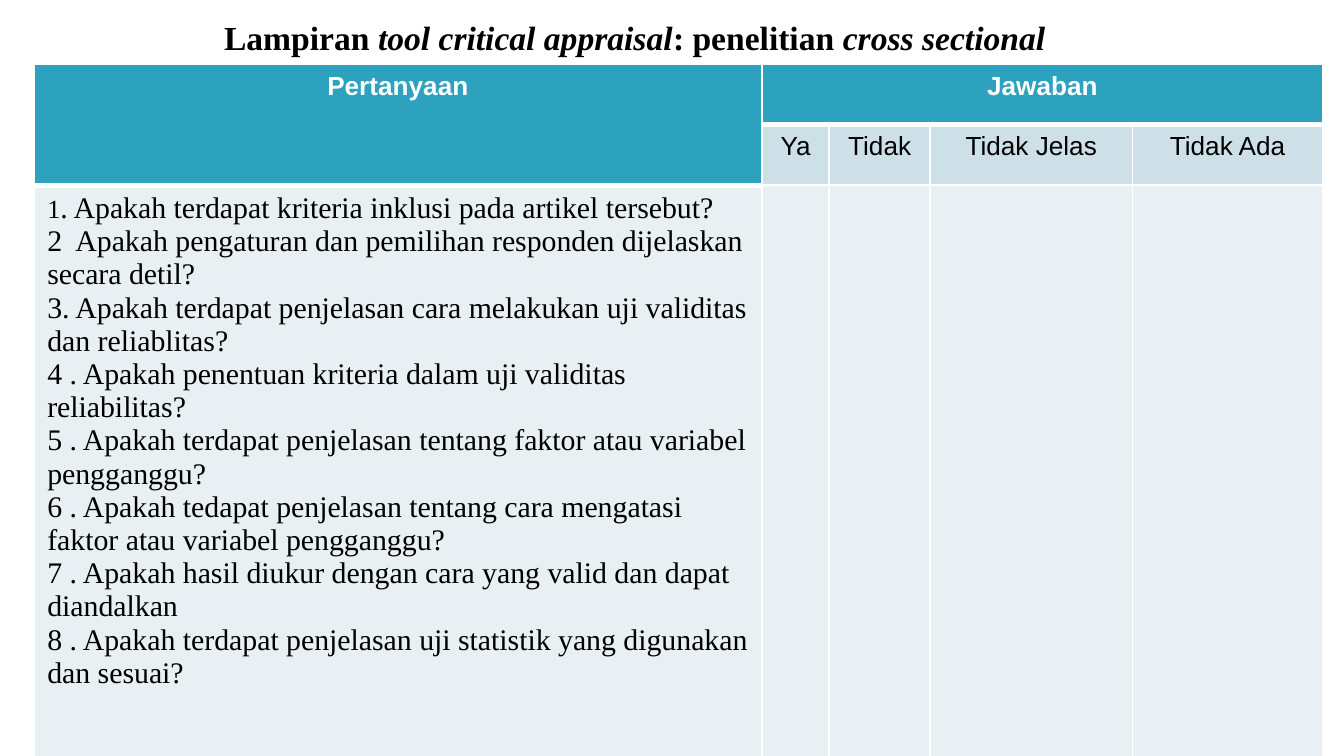
from lxml import etree
from pptx import Presentation
from pptx.dml.color import RGBColor
from pptx.enum.text import MSO_ANCHOR, MSO_AUTO_SIZE, PP_ALIGN
from pptx.oxml.ns import qn
from pptx.util import Cm, Pt

CENTER, LEFT = PP_ALIGN.CENTER, PP_ALIGN.LEFT
MIDDLE, NO_FIT = MSO_ANCHOR.MIDDLE, MSO_AUTO_SIZE.NONE
BLACK = RGBColor(0x00, 0x00, 0x00)
WHITE = RGBColor(0xFF, 0xFF, 0xFF)
TEAL = RGBColor(0x2D, 0xA2, 0xBF)
BLUE = RGBColor(0xCD, 0xE0, 0xE8)
PALE = RGBColor(0xE8, 0xF0, 0xF4)
SANS, SERIF = "Arial", "Times New Roman"

TITLE = [  # text, italic
    ("Lampiran ", False),
    ("tool critical appraisal", True),
    (": penelitian ", False),
    ("cross sectional ", True),
]
QUESTION_HEADING, ANSWER_HEADING = "Pertanyaan", "Jawaban"
ANSWERS = ["Ya", "Tidak", "Tidak Jelas", "Tidak Ada"]
QUESTIONS = [  # number, rest of the line
    ("1", ". Apakah terdapat kriteria inklusi pada artikel tersebut?"),
    ("2", "  Apakah pengaturan dan pemilihan responden dijelaskan secara detil?"),
    ("3", ". Apakah terdapat penjelasan cara melakukan uji validitas dan reliablitas?"),
    ("4", " . Apakah penentuan kriteria dalam uji validitas reliabilitas?"),
    ("5", " . Apakah terdapat penjelasan tentang faktor atau variabel pengganggu?"),
    ("6", " . Apakah tedapat penjelasan tentang cara mengatasi faktor atau variabel pengganggu?"),
    ("7", " . Apakah hasil diukur dengan cara yang valid dan dapat diandalkan"),
    ("8", " . Apakah terdapat penjelasan uji statistik yang digunakan dan sesuai?"),
]
COLUMN_WIDTHS = [13.76, 1.27, 1.91, 3.82, 3.6]
ROWS = [  # height, fill, width of the bottom border
    (1.14, TEAL, 3),
    (1.14, BLUE, 1),
    (10.95, PALE, 1),
]


def add_run(p, text, font, size, color, bold=False, italic=False):
    r = p.add_run()
    r.text = text
    r.font.name, r.font.size = font, Pt(size)
    r.font.bold, r.font.italic = bold, italic
    r.font.color.rgb = color


def style_cell(cell, fill, bottom):
    """Fill the cell and give it white borders; bottom is a width in points."""
    cell.fill.solid()
    cell.fill.fore_color.rgb = fill
    tcPr = cell._tc.get_or_add_tcPr()
    widths = {"a:lnL": 1, "a:lnR": 1, "a:lnT": 1, "a:lnB": bottom}
    for i, (tag, width) in enumerate(widths.items()):
        ln = etree.Element(qn(tag), w=str(int(Pt(width))))
        solid = etree.SubElement(ln, qn("a:solidFill"))
        etree.SubElement(solid, qn("a:srgbClr"), val=str(WHITE))
        tcPr.insert(i, ln)


def write_heading(cell, text, color, bold):
    p = cell.text_frame.paragraphs[0]
    p.alignment = CENTER
    add_run(p, text, SANS, 14, color, bold)


prs = Presentation()
prs.slide_width, prs.slide_height = Cm(25.4), Cm(14.28)
s = prs.slides.add_slide(prs.slide_layouts[5])

title = s.shapes.title
title.left, title.top, title.width, title.height = Cm(0.43), Cm(0.38), Cm(23.29), Cm(0.64)
tf = title.text_frame
tf.auto_size, tf.word_wrap, tf.vertical_anchor = NO_FIT, True, MIDDLE
p = tf.paragraphs[0]
p.alignment = CENTER
for text, italic in TITLE:
    add_run(p, text, SERIF, 18, BLACK, True, italic)

table_height = sum(height for height, _, _ in ROWS)
table = s.shapes.add_table(
    len(ROWS), len(COLUMN_WIDTHS), Cm(0.64), Cm(1.22),
    Cm(sum(COLUMN_WIDTHS)), Cm(table_height)).table
for column, width in zip(table.columns, COLUMN_WIDTHS):
    column.width = Cm(width)
for row, (height, fill, bottom) in zip(table.rows, ROWS):
    row.height = Cm(height)
    for cell in row.cells:
        style_cell(cell, fill, bottom)
table.cell(0, 0).merge(table.cell(1, 0))
table.cell(0, 1).merge(table.cell(0, len(ANSWERS)))

write_heading(table.cell(0, 0), QUESTION_HEADING, WHITE, True)
write_heading(table.cell(0, 1), ANSWER_HEADING, WHITE, True)
for col, answer in enumerate(ANSWERS, start=1):
    write_heading(table.cell(1, col), answer, BLACK, False)

tf = table.cell(2, 0).text_frame
for i, (number, question) in enumerate(QUESTIONS):
    p = tf.paragraphs[0] if i == 0 else tf.add_paragraph()
    p.alignment = LEFT
    add_run(p, number, SERIF, 14 if i == 0 else 16, BLACK)
    add_run(p, question, SERIF, 16, BLACK)

prs.save("out.pptx")
